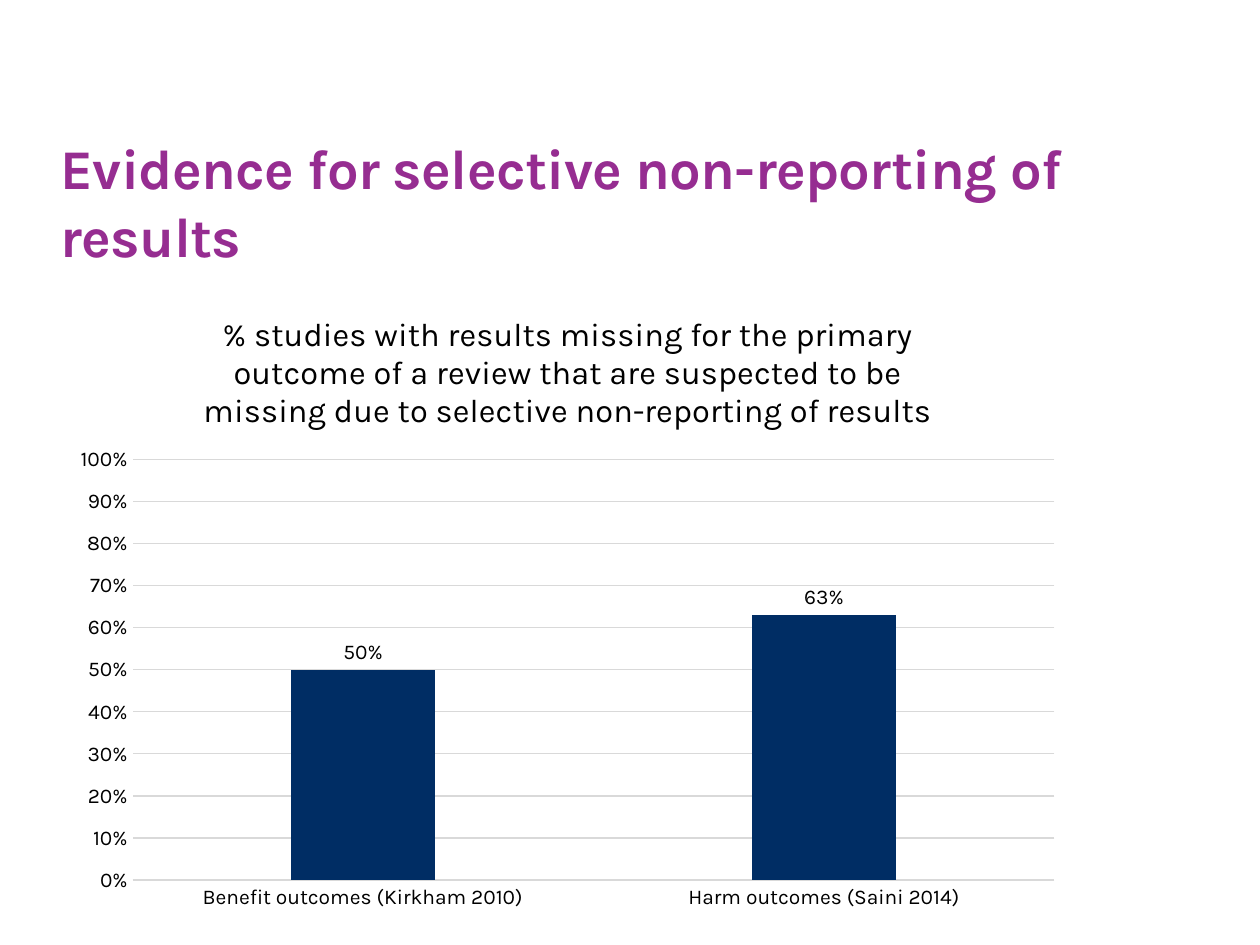
"""Build a slide with a column chart on selective non-reporting of results."""
from lxml import etree
from pptx import Presentation, util as u
from pptx.chart.data import CategoryChartData
from pptx.dml.color import RGBColor
from pptx.enum import chart as ch, text
from pptx.oxml.ns import qn

WIDTH, HEIGHT = 10, 7.5
LEFT = 0.48
FONT, BLACK, PURPLE, NAVY, GREY = "Karla", "000000", "962D91", "002D64", "D9D9D9"
HEADING = "Evidence for selective non-reporting of results"
CHART_TITLE = ("% studies with results missing for the primary outcome of a review "
               "that are suspected to be missing due to selective non-reporting of results")
OUTCOMES = {"Benefit outcomes (Kirkham 2010)": 0.5, "Harm outcomes (Saini 2014)": 0.63}
PLOT_SHARES = {"x": 0.07, "y": 0.27, "w": 0.91, "h": 0.66}


def colour(value):
    return RGBColor.from_string(value)


def assign(target, **values):
    for name, value in values.items():
        setattr(target, name, value)


def style(font, size, shade=BLACK, bold=False):
    assign(font, name=FONT, size=u.Pt(size), bold=bold)
    font.color.rgb = colour(shade)


def rule(line):
    line.color.rgb = colour(GREY)
    line.width = u.Pt(0.75)


def add_heading(page):
    box = page.shapes.add_textbox(*map(u.Inches, (LEFT, 1.44, 8.95, 0.69)))
    frame = box.text_frame
    assign(frame, word_wrap=True, vertical_anchor=text.MSO_ANCHOR.BOTTOM,
           margin_left=0, margin_right=0, margin_top=0, margin_bottom=0)
    span = frame.paragraphs[0].add_run()
    span.text = HEADING
    style(span.font, 32, PURPLE, True)
    span.font._element.set("spc", "-40")


def place_plot(chart):
    plot_area = chart._chartSpace.chart.plotArea
    for old in plot_area.findall(qn("c:layout")):
        plot_area.remove(old)
    layout = etree.Element(qn("c:layout"))
    manual = etree.SubElement(layout, qn("c:manualLayout"))
    settings = {"layoutTarget": "inner", "xMode": "edge", "yMode": "edge", **PLOT_SHARES}
    for name, value in settings.items():
        etree.SubElement(manual, qn(f"c:{name}")).set("val", str(value))
    plot_area.insert(0, layout)


def add_outcome_chart(page):
    data = CategoryChartData(number_format="0%")
    data.categories = list(OUTCOMES)
    data.add_series("Series 1", list(OUTCOMES.values()))
    area = map(u.Inches, (LEFT + 0.01, 2.28, 8.04, 5.06))
    chart = page.shapes.add_chart(ch.XL_CHART_TYPE.COLUMN_CLUSTERED, *area, data).chart
    style(chart.font, 10)
    assign(chart, has_legend=False, has_title=True)
    para = chart.chart_title.text_frame.paragraphs[0]
    span = para.add_run()
    span.text = CHART_TITLE
    style(span.font, 18.6)
    chart.chart_title.include_in_layout = False

    for axis in (chart.category_axis, chart.value_axis):
        assign(axis, major_tick_mark=ch.XL_TICK_MARK.NONE, minor_tick_mark=ch.XL_TICK_MARK.NONE)
        style(axis.tick_labels.font, 12)
    rule(chart.category_axis.format.line)
    values = chart.value_axis
    assign(values, minimum_scale=0, maximum_scale=1, major_unit=0.1, has_major_gridlines=True)
    rule(values.major_gridlines.format.line)
    values.format.line.fill.background()
    assign(values.tick_labels, number_format="0%", number_format_is_linked=False)

    plot = chart.plots[0]
    assign(plot, gap_width=219, overlap=-27, vary_by_categories=False, has_data_labels=True)
    labels = plot.data_labels
    assign(labels, show_value=True, number_format="0%", number_format_is_linked=False,
           position=ch.XL_LABEL_POSITION.OUTSIDE_END)
    style(labels.font, 12)
    fill = plot.series[0].format.fill
    fill.solid()
    fill.fore_color.rgb = colour(NAVY)
    place_plot(chart)


def main():
    deck = Presentation()
    assign(deck, slide_width=u.Inches(WIDTH), slide_height=u.Inches(HEIGHT))
    page = deck.slides.add_slide(deck.slide_layouts[6])
    add_heading(page)
    add_outcome_chart(page)
    deck.save("out.pptx")


if __name__ == "__main__":
    main()
